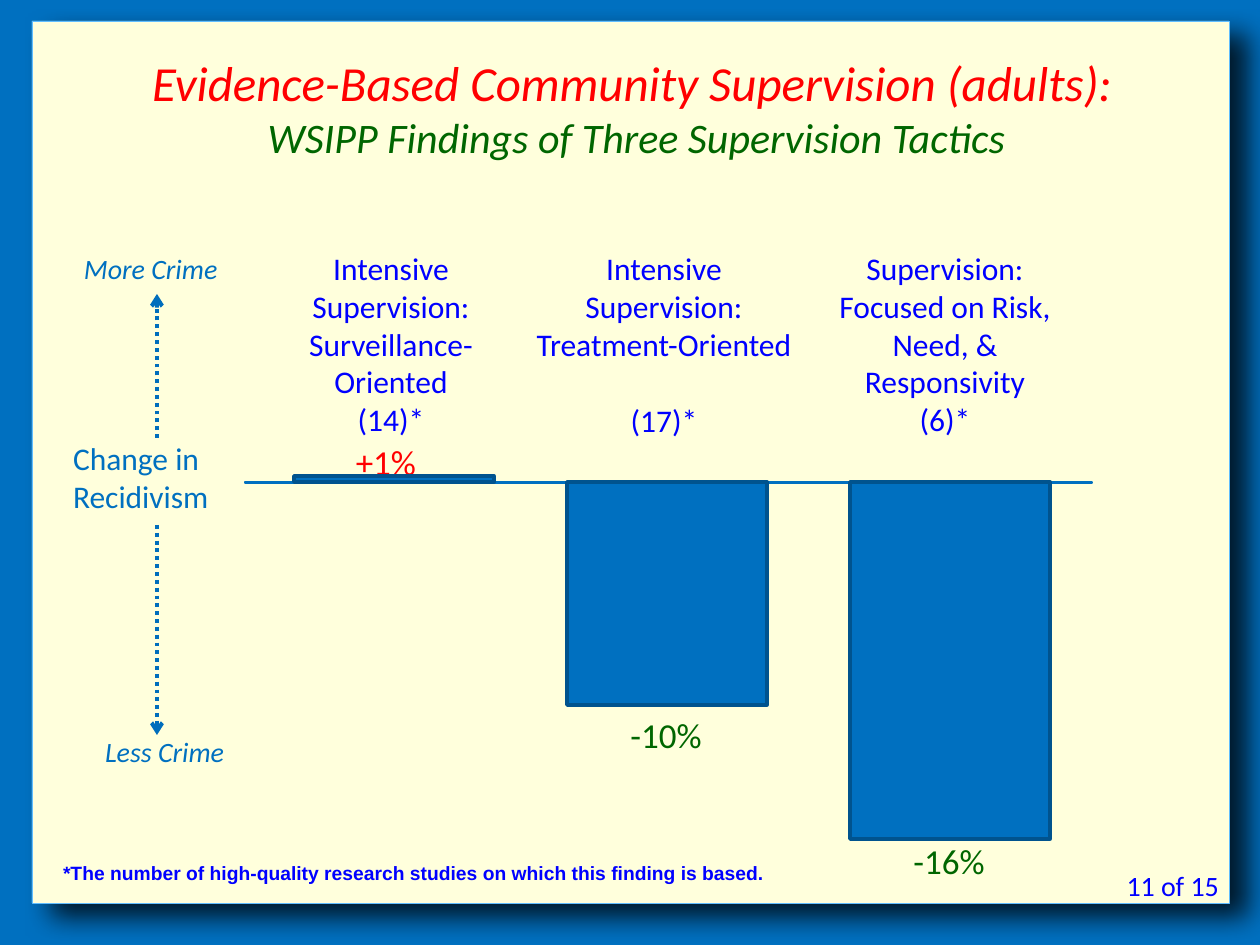
from lxml import etree
from pptx import Presentation
from pptx.dml.color import RGBColor
from pptx.enum.dml import MSO_LINE
from pptx.enum.shapes import MSO_CONNECTOR, MSO_SHAPE
from pptx.enum.text import MSO_ANCHOR, MSO_AUTO_SIZE, PP_ALIGN
from pptx.oxml import parse_xml
from pptx.oxml.ns import nsdecls, qn
from pptx.util import Pt

RECT = MSO_SHAPE.RECTANGLE
STRAIGHT = MSO_CONNECTOR.STRAIGHT
DOTTED = MSO_LINE.ROUND_DOT
TOP = MSO_ANCHOR.TOP
NO_FIT = MSO_AUTO_SIZE.NONE
LEFT, CENTER, RIGHT = PP_ALIGN.LEFT, PP_ALIGN.CENTER, PP_ALIGN.RIGHT

BLUE = RGBColor(0x00, 0x70, 0xC0)
ARROW_BLUE = RGBColor(0x00, 0x6E, 0xBC)
BAR_EDGE = RGBColor(0x00, 0x53, 0x8E)
PANEL_EDGE = RGBColor(0x60, 0xBD, 0xFF)
CREAM = RGBColor(0xFF, 0xFF, 0xDC)
GRAY = RGBColor(0x86, 0x86, 0x86)
RED = RGBColor(0xFF, 0x00, 0x00)
GREEN = RGBColor(0x00, 0x66, 0x00)
TEXT_BLUE = RGBColor(0x00, 0x00, 0xFF)

BASELINE = 482
BAR_WIDTH = 200
LABEL_TOP = 249

# label left, label width, label, studies, gap before studies in points
LABELS = [
    (262, 258, "Intensive Supervision: Surveillance-Oriented", "(14)*", 0),
    (535, 258, "Intensive Supervision: Treatment-Oriented", "(17)*", 22),
    (798, 294, "Supervision:\vFocused on Risk, Need, &\vResponsivity", "(6)*", 0),
]
# text, left, top, width, colour
VALUES = [
    ("+1%", 355, 440, 62, RED),
    ("-10%", 630, 713, 72, GREEN),
    ("-16%", 913, 839, 72, GREEN),
]
# left, top, height
BARS = [(294, BASELINE - 6, 6), (567, BASELINE, 223), (850, BASELINE, 357)]


def px(n):
    return round(n * 914400 / 126)


def box(*lengths):
    return [px(n) for n in lengths]


def format_run(r, size, color, italic=False, bold=False, font="Calibri"):
    r.font.name = font
    r.font.size = Pt(size)
    r.font.color.rgb = color
    r.font.italic = italic
    r.font.bold = bold


def set_margins(tf, side=0, end=0):
    tf.margin_left = tf.margin_right = px(side)
    tf.margin_top = tf.margin_bottom = px(end)


def add_text(s, text, at, size, color, align=LEFT, wrap=True, **style):
    tf = s.shapes.add_textbox(*box(*at)).text_frame
    tf.word_wrap = wrap
    set_margins(tf)
    tf.text = text
    for p in tf.paragraphs:
        p.alignment = align
        for r in p.runs:
            format_run(r, size, color, **style)
    return tf


def add_rect(s, at, fill, line, width):
    sp = s.shapes.add_shape(RECT, *box(*at))
    sp.shadow.inherit = False
    sp.fill.solid()
    sp.fill.fore_color.rgb = fill
    sp.line.color.rgb = line
    sp.line.width = Pt(width)
    return sp


def add_panel(s):
    sp = add_rect(s, (32, 21, 1197, 882), CREAM, PANEL_EDGE, 0.05)
    effects = sp.element.spPr.find(qn("a:effectLst"))
    effects.append(parse_xml(
        f'<a:outerShdw {nsdecls("a")} blurRad="{Pt(15)}" dist="{Pt(14)}" '
        f'dir="{36 * 60000}" algn="tl" rotWithShape="0">'
        '<a:srgbClr val="000000"><a:alpha val="79000"/></a:srgbClr></a:outerShdw>'))
    s.shapes.title.element.addprevious(sp.element)


def set_title(s):
    title = s.shapes.title
    title.left, title.top, title.width, title.height = box(32, 53, 1200, 111)
    tf = title.text_frame
    tf.auto_size = NO_FIT
    tf.word_wrap = True
    tf.vertical_anchor = TOP
    set_margins(tf)
    tf.text = ("Evidence-Based Community Supervision (adults):\v"
               "WSIPP Findings of Three Supervision Tactics")
    p = tf.paragraphs[0]
    p.alignment = CENTER
    pPr = p.runs[0].font and p._p.get_or_add_pPr()
    pPr.set("marL", str(px(9)))
    pPr.set("indent", str(px(-9)))
    for r, size, color in zip(p.runs, (28, 24), (RED, GREEN)):
        format_run(r, size, color, italic=True)


def add_arrow(s, x, start, end):
    c = s.shapes.add_connector(STRAIGHT, *box(x, start, x, end))
    c.line.color.rgb = ARROW_BLUE
    c.line.width = Pt(2.25)
    c.line.dash_style = DOTTED
    etree.SubElement(c.line._get_or_add_ln(), qn("a:tailEnd"), type="arrow")
    etree.SubElement(c.element.spPr, qn("a:effectLst"))


def add_label(s, left, width, label, studies, gap):
    tf = add_text(s, f"{label}\n{studies}", (left, LABEL_TOP, width, 190),
                  18, TEXT_BLUE, CENTER)
    tf.paragraphs[1].space_before = Pt(gap)


def main():
    prs = Presentation()
    prs.slide_width, prs.slide_height = box(1260, 945)
    s = prs.slides.add_slide(prs.slide_layouts[5])
    s.background.fill.solid()
    s.background.fill.fore_color.rgb = BLUE
    add_panel(s)
    set_title(s)

    for label in LABELS:
        add_label(s, *label)
    for text, left, top, width, color in VALUES:
        add_text(s, text, (left, top, width, 43), 20, color, CENTER, wrap=False)
    add_text(s, "Change in Recidivism", (73, 439, 168, 77), 18, BLUE)
    add_text(s, "*The number of high-quality research studies on which this "
             "finding is based.", (63, 861, 966, 32), 11, TEXT_BLUE,
             bold=True, font="Arial")

    add_rect(s, (245, BASELINE, 847, 1), GRAY, BLUE, 1.13)
    for left, top, height in BARS:
        add_rect(s, (left, top, BAR_WIDTH, height), BLUE, BAR_EDGE, 2)

    page = add_text(s, "11 of 15", (1061, 863, 171, 47), 16, TEXT_BLUE, RIGHT)
    set_margins(page, 13, 6)
    add_text(s, "Less Crime", (105, 735, 168, 34), 16, BLUE, italic=True)
    add_text(s, "More Crime", (84, 252, 168, 34), 16, BLUE, italic=True)
    add_arrow(s, 157, 438, 294)
    add_arrow(s, 157, 525, 735)
    prs.save("out.pptx")


if __name__ == "__main__":
    main()
